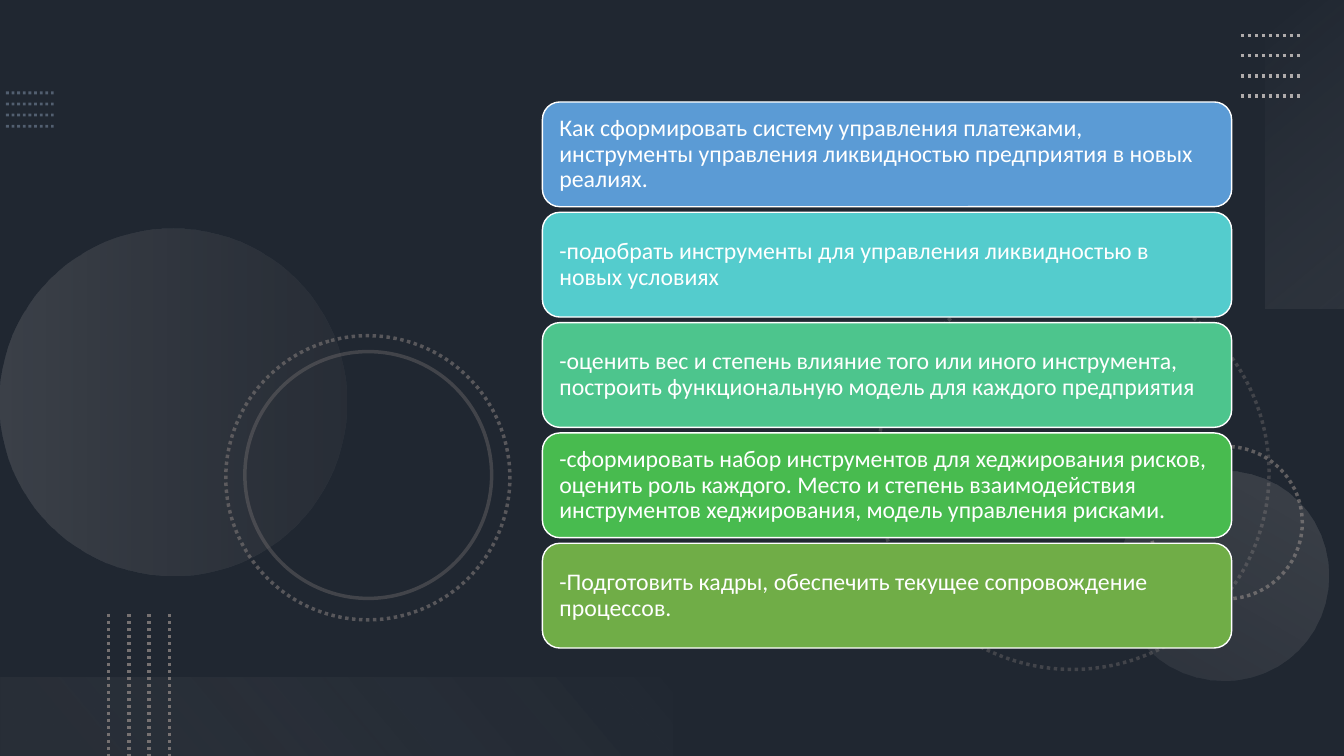
from pptx import Presentation
from pptx import util as u
from pptx.dml.color import RGBColor
from pptx.enum import dml, shapes, text
from pptx.oxml.ns import qn
from lxml import etree

COLORS = {
    "background": "44546A", "veil": "000000", "dots": "8497B0",
    "gray": "767171", "silver": "AFABAB", "mist": "F5F5F5",
    "pale": "F1F0F0", "white": "FFFFFF",
    "blue": "5B9BD5", "turquoise": "54CCCD", "mint": "4DC58D",
    "green": "48BB4F", "olive": "70AD47",
}

CARDS = [
    ("blue", "Как сформировать систему управления платежами, инструменты "
             "управления ликвидностью предприятия в новых реалиях."),
    ("turquoise", "-подобрать инструменты для управления ликвидностью в новых условиях"),
    ("mint", "-оценить вес и степень влияние того или иного инструмента, "
             "построить функциональную модель для каждого предприятия"),
    ("green", "-сформировать набор инструментов для хеджирования рисков, "
              "оценить роль каждого. Место и степень взаимодействия "
              "инструментов хеджирования, модель управления рисками."),
    ("olive", "-Подготовить кадры, обеспечить текущее сопровождение процессов."),
]
CARD_LEFT, CARD_TOP, CARD_WIDTH, CARD_HEIGHT, CARD_STEP = 13.67, 2.57, 17.37, 2.64, 2.78

DOT_GROUPS = {
    "left": dict(start=(0.15, 2.34), run=(1.2, 0), step=(0, 0.28), color="dots", width=2, alpha=50),
    "corner": dict(start=(31.27, 0.89), run=(1.52, 0), step=(0, 0.51), color="silver", width=2.5, alpha=100),
    "bottom": dict(start=(2.74, 15.47), run=(0, 3.58), step=(0.51, 0), color="gray", width=2.5, alpha=100),
}
LINES_PER_GROUP = 4

BACK_RINGS = [
    (22.07, 6.96, 9.91, 75, True, 40),
    (28.98, 11.25, 3.84, 270, True, 75),
]
FRONT_RINGS = [
    (5.69, 8.46, 7.16, 75, True, 65),
    (6.17, 8.86, 6.22, 75, False, 40),
]
DISCS = [
    ((0, 5.77, 8.74, 8.74), 270, 90, [(0, "silver", 20), (1, "gray", 10)]),
    ((28.19, 11.86, 5.28, 5.28), 210, 90, [(0, "silver", 10), (1, "silver", 20)]),
]
BANDS = [
    ((29.01, 2.9, 7.77, 1.98), 270, 140, [(0, "mist", 0), (1, "silver", 10)]),
    ((0, 17.07, 16.94, 1.98), 180, 140, [(0.1, "gray", 10), (1, "pale", 0)]),
]


def rgb(name):
    return RGBColor.from_string(COLORS[name])


def set_all(target, values):
    for name, value in values.items():
        setattr(target, name, value)


def set_alpha(parent, percent):
    if percent < 100:
        for color in parent.iter(qn("a:srgbClr")):
            etree.SubElement(color, qn("a:alpha")).set("val", str(percent * 1000))


def add_block(slide, kind, box, rotation=0):
    shape = slide.shapes.add_shape(kind, *map(u.Cm, box))
    shape.shadow.inherit = False
    shape.rotation = rotation
    return shape


def style_line(line, color, width, dotted, alpha):
    line.fill.solid()
    line.fill.fore_color.rgb = rgb(color)
    line.width = u.Pt(width)
    if dotted:
        line.dash_style = dml.MSO_LINE.ROUND_DOT


def add_veil(slide, width, height):
    veil = add_block(slide, shapes.MSO_SHAPE.RECTANGLE, (0, 0, width, height))
    veil.fill.solid()
    veil.fill.fore_color.rgb = rgb("veil")
    veil.line.fill.background()
    set_alpha(veil.fill._xPr, 53)


def add_dots(slide, start, run, step, color, width, alpha):
    for index in range(LINES_PER_GROUP):
        x, y = (origin + index * move for origin, move in zip(start, step))
        ends = (x, y, x + run[0], y + run[1])
        connector = slide.shapes.add_connector(shapes.MSO_CONNECTOR.STRAIGHT, *map(u.Cm, ends))
        style_line(connector.line, color, width, True, alpha)
        properties = connector._element.spPr
        set_alpha(properties, alpha)
        etree.SubElement(properties, qn("a:effectLst"))


def add_ring(slide, left, top, size, rotation, dotted, alpha):
    ring = add_block(slide, shapes.MSO_SHAPE.OVAL, (left, top, size, size), rotation)
    ring.fill.background()
    style_line(ring.line, "gray", 2.5, dotted, alpha)
    set_alpha(ring._element.spPr, alpha)


def add_gradient(slide, kind, box, rotation, angle, stops):
    shape = add_block(slide, kind, box, rotation)
    shape.line.fill.background()
    shape.fill.gradient()
    shape.fill.gradient_angle = 360 - angle
    for stop, (position, color, alpha) in zip(shape.fill.gradient_stops, stops):
        stop.position = position
        stop.color.rgb = rgb(color)
        set_alpha(stop._gs, alpha)


def add_card(slide, index, color, wording):
    box = (CARD_LEFT, CARD_TOP + index * CARD_STEP, CARD_WIDTH, CARD_HEIGHT)
    card = add_block(slide, shapes.MSO_SHAPE.ROUNDED_RECTANGLE, box)
    card.fill.solid()
    card.fill.fore_color.rgb = rgb(color)
    style_line(card.line, "white", 1, False, 100)
    frame = card.text_frame
    inset = u.Cm(0.3)
    set_all(frame, dict(word_wrap=True, vertical_anchor=text.MSO_ANCHOR.MIDDLE,
                        margin_left=inset, margin_right=inset,
                        margin_top=inset, margin_bottom=inset))
    paragraph = frame.paragraphs[0]
    paragraph.text = wording
    set_all(paragraph, dict(alignment=text.PP_ALIGN.LEFT, line_spacing=0.9))
    set_all(paragraph.font, dict(name="Calibri", size=u.Pt(17)))
    paragraph.font.color.rgb = rgb("white")


def main():
    width, height = 33.87, 19.05
    presentation = Presentation()
    set_all(presentation, dict(slide_width=u.Cm(width), slide_height=u.Cm(height)))
    slide = presentation.slides.add_slide(presentation.slide_layouts[6])
    slide.background.fill.solid()
    slide.background.fill.fore_color.rgb = rgb("background")

    add_veil(slide, width, height)
    add_dots(slide, **DOT_GROUPS["left"])
    for ring in BACK_RINGS:
        add_ring(slide, *ring)
    for disc in DISCS:
        add_gradient(slide, shapes.MSO_SHAPE.OVAL, *disc)
    for ring in FRONT_RINGS:
        add_ring(slide, *ring)
    for band, group in zip(BANDS, ("corner", "bottom")):
        add_gradient(slide, shapes.MSO_SHAPE.RECTANGLE, *band)
        add_dots(slide, **DOT_GROUPS[group])
    for index, (color, wording) in enumerate(CARDS):
        add_card(slide, index, color, wording)
    presentation.save("out.pptx")


if __name__ == "__main__":
    main()
